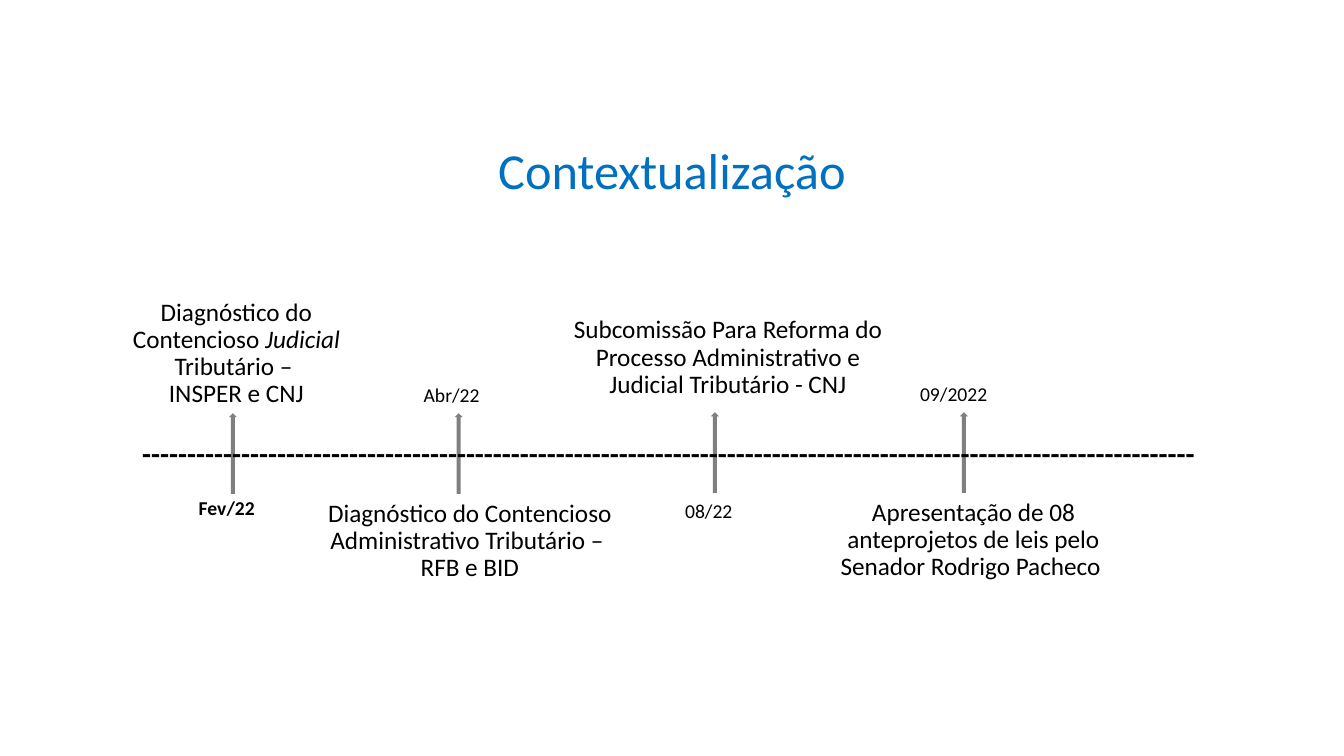
import pptx
import pptx.dml.color
import pptx.enum.shapes
import pptx.enum.text
import pptx.oxml
import pptx.oxml.ns
import pptx.util

PX = 9144
COLORS = {"title": "0070C0", "text": "000000", "arrow": "7F7F7F"}
TITLE_SHADOW = (
    '<a:effectLst %s><a:outerShdw blurRad="38100" dist="38100" dir="2700000" algn="tl">'
    '<a:srgbClr val="000000"><a:alpha val="43000"/></a:srgbClr>'
    '</a:outerShdw></a:effectLst>' % pptx.oxml.ns.nsdecls("a")
)
DATE_W, DATE_H, EVENT_H = 106, 58, 82
EVENTS = [
    {"arrow": (227, 410), "date": ("Fev/22", 172, 476, True), "box": (91, 310, 287),
     "text": [[("Diagnóstico do Contencioso ", False), ("Judicial ", True), ("Tributário – ", False)],
              [("INSPER e CNJ", False)]]},
    {"arrow": (451, 410), "date": ("Abr/22", 395, 364, False), "box": (290, 496, 352),
     "text": [[("Diagnóstico do Contencioso Administrativo Tributário – ", False)],
              [("RFB e BID", False)]]},
    {"arrow": (705, 409), "date": ("08/22", 650, 479, False), "box": (551, 314, 342),
     "text": [[("Subcomissão Para Reforma do Processo Administrativo e Judicial Tributário - CNJ", False)]]},
    {"arrow": (952, 409), "date": ("09/2022", 893, 363, False), "box": (808, 495, 315),
     "text": [[("Apresentação de 08 anteprojetos de leis pelo Senador Rodrigo Pacheco ", False)]]},
]


def add_text(slide, box, paragraphs, size, color="text", bold=False, centered=True, inset=(7, 4)):
    """Add a text box whose paragraphs are lists of (text, italic) runs."""
    s = slide.shapes.add_textbox(*(v * PX for v in box))
    tf = s.text_frame
    tf.word_wrap = True
    tf.margin_left = tf.margin_right = inset[0] * PX
    tf.margin_top = tf.margin_bottom = inset[1] * PX
    anchors = pptx.enum.text.MSO_ANCHOR
    tf.vertical_anchor = anchors.MIDDLE if centered else anchors.TOP
    aligns = pptx.enum.text.PP_ALIGN
    for i, runs in enumerate(paragraphs):
        p = tf.add_paragraph() if i else tf.paragraphs[0]
        p.alignment = aligns.CENTER if centered else aligns.LEFT
        p.line_spacing = 0.9
        for text, italic in runs:
            r = p.add_run()
            r.text = text
            r.font.size = pptx.util.Pt(size)
            r.font.name = "Calibri"
            r.font.bold = bold
            r.font.italic = italic
            r.font.color.rgb = pptx.dml.color.RGBColor.from_string(COLORS[color])
    return s


def add_title(slide, box):
    """Add the shadowed slide title."""
    s = add_text(slide, box, [[("Contextualização", False)]], 36, "title", inset=(10, 5))
    rpr = s.text_frame.paragraphs[0].runs[0].font._element
    fill = rpr.find(pptx.oxml.ns.qn("a:solidFill"))
    fill.addnext(pptx.oxml.parse_xml(TITLE_SHADOW))


def add_arrow(slide, x, y):
    """Add one upward marker across the time line."""
    kind = pptx.enum.shapes.MSO_SHAPE.UP_ARROW
    s = slide.shapes.add_shape(kind, x * PX, y * PX, 8 * PX, 80 * PX)
    s.shadow.inherit = False
    s.fill.solid()
    s.fill.fore_color.rgb = pptx.dml.color.RGBColor.from_string(COLORS["arrow"])
    s.line.fill.background()


def add_timeline(slide, box):
    """Add the dashed time line with its markers, dates and events."""
    left, top, width, height = box
    for event in EVENTS:
        x, y = event["arrow"]
        add_arrow(slide, left + x, top + y)
    dashes = (left + 134, top + 432, width - 134, 56)
    add_text(slide, dashes, [[("-" * 117, False)]], 21, bold=True, centered=False)
    for event in EVENTS:
        date, x, y, bold = event["date"]
        add_text(slide, (left + x, top + y, DATE_W, DATE_H), [[(date, False)]], 14, bold=bold)
        x, y, w = event["box"]
        add_text(slide, (left + x, top + y, w, EVENT_H), event["text"], 18)


def main():
    """Build and save the slide."""
    prs = pptx.Presentation()
    prs.slide_width, prs.slide_height = 1333 * PX, 750 * PX
    slide = prs.slides.add_slide(prs.slide_layouts[6])
    add_title(slide, (114, 92, 1105, 160))
    add_timeline(slide, (0, 0, 1333, 750))
    prs.save("out.pptx")


if __name__ == "__main__":
    main()
